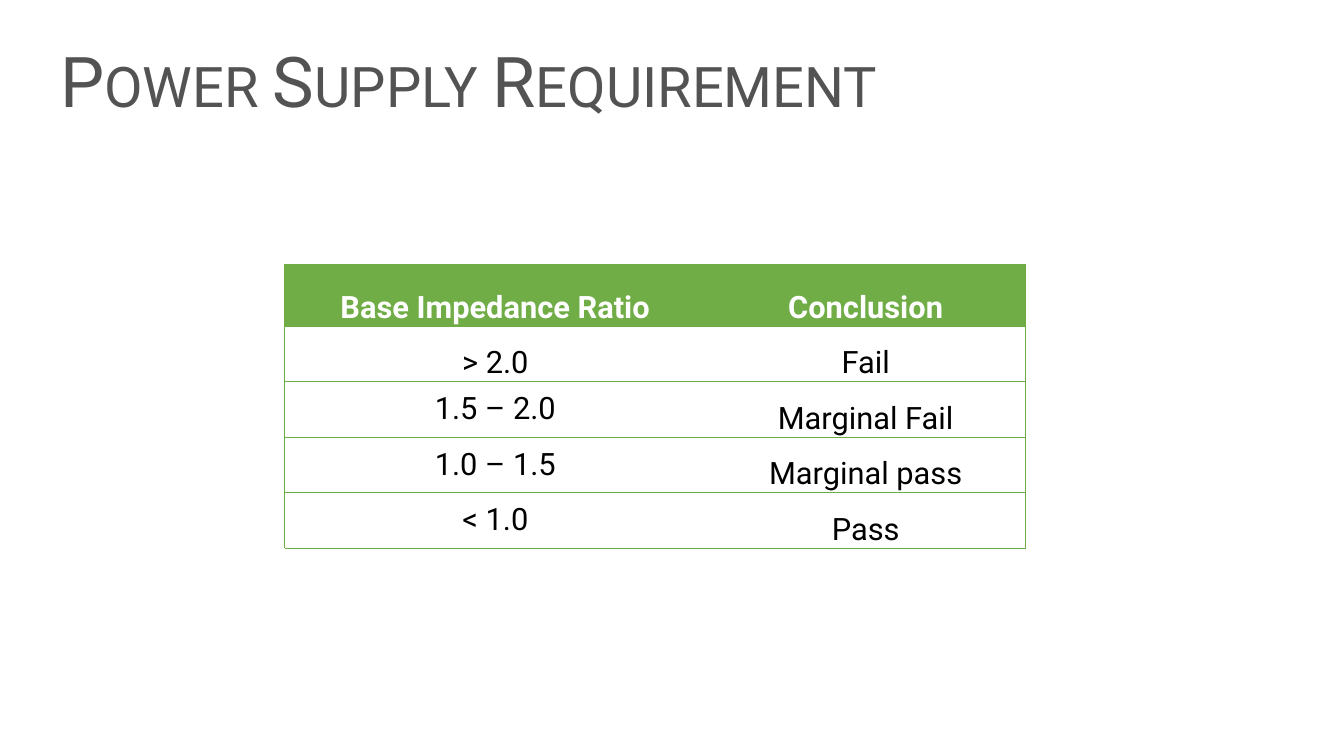
import dataclasses

import lxml.etree
import pptx
import pptx.dml.color
import pptx.enum.text
import pptx.oxml.ns
import pptx.util

ANCHOR = pptx.enum.text.MSO_ANCHOR
ALIGN = pptx.enum.text.PP_ALIGN


@dataclasses.dataclass(frozen=True)
class Theme:
    font: str = "Roboto"
    title_size: int = 100
    table_size: int = 44
    title: str = "535353"
    header_text: str = "FFFFFF"
    body_text: str = "000000"
    header_fill: str = "70AD47"
    border: str = "6DAC43"
    border_width: float = 0.75


THEME = Theme()
GRID_STEP = 0.05
TITLE_AREA = (22, 16, 460, 35)
TABLE_ORIGIN = (113, 105)
COLUMN_WIDTHS = (167.2, 126.8)
HEADER_HEIGHT = 24.4
BODY_HEIGHT = 22

RATIOS = [
    ("Base Impedance Ratio", "Conclusion"),
    ("> 2.0", "Fail"),
    ("1.5 – 2.0", "Marginal Fail"),
    ("1.0 – 1.5", "Marginal pass"),
    ("< 1.0", "Pass"),
]


def grid(steps):
    return pptx.util.Inches(steps * GRID_STEP)


def rgb(value):
    return pptx.dml.color.RGBColor.from_string(value)


def write_text(frame, text, *, size, color, bold=False, align=ALIGN.LEFT,
               anchor=ANCHOR.MIDDLE, line_spacing=1.0, small_caps=False):
    frame.word_wrap = True
    frame.vertical_anchor = anchor
    para = frame.paragraphs[0]
    para.alignment = align
    para.line_spacing = line_spacing
    span = para.add_run()
    span.text = text
    span.font.name = THEME.font
    span.font.size = pptx.util.Pt(size)
    span.font.bold = bold
    span.font.color.rgb = rgb(color)
    if small_caps:
        span.font._element.set("cap", "small")


def add_title(page, text):
    box = page.shapes.add_textbox(*map(grid, TITLE_AREA))
    write_text(box.text_frame, text, size=THEME.title_size, color=THEME.title,
               line_spacing=0.9, small_caps=True)


def set_borders(cell, visible_sides):
    qualified = pptx.oxml.ns.qn
    properties = cell._tc.get_or_add_tcPr()
    for position, side in enumerate("LRTB"):
        line = lxml.etree.Element(qualified(f"a:ln{side}"))
        line.set("w", str(pptx.util.Pt(THEME.border_width)))
        if side in visible_sides:
            fill = lxml.etree.SubElement(line, qualified("a:solidFill"))
            color = lxml.etree.SubElement(fill, qualified("a:srgbClr"))
            color.set("val", THEME.border)
        else:
            lxml.etree.SubElement(line, qualified("a:noFill"))
        properties.insert(position, line)


def format_cell(cell, text, row, column):
    is_header = row == 0
    if is_header:
        cell.fill.solid()
        cell.fill.fore_color.rgb = rgb(THEME.header_fill)
    else:
        cell.fill.background()
    cell.margin_left = cell.margin_right = cell.margin_top = pptx.util.Inches(0.01)
    cell.margin_bottom = 0
    centred = column == 0 and row > 1
    cell.vertical_anchor = ANCHOR.MIDDLE if centred else ANCHOR.BOTTOM
    write_text(cell.text_frame, text, size=THEME.table_size, bold=is_header,
               color=THEME.header_text if is_header else THEME.body_text,
               align=ALIGN.CENTER, anchor=None)
    set_borders(cell, "TB" + "LR"[column])


def add_ratio_table(page, rows):
    heights = [HEADER_HEIGHT] + [BODY_HEIGHT] * (len(rows) - 1)
    size = (sum(COLUMN_WIDTHS), sum(heights))
    frame = page.shapes.add_table(len(rows), len(COLUMN_WIDTHS),
                                  *map(grid, TABLE_ORIGIN + size))
    table = frame.table
    table.horz_banding = False
    for column, width in zip(table.columns, COLUMN_WIDTHS):
        column.width = grid(width)
    for row, height in zip(table.rows, heights):
        row.height = grid(height)
    for row, texts in enumerate(rows):
        for column, text in enumerate(texts):
            format_cell(table.cell(row, column), text, row, column)


def main():
    deck = pptx.Presentation()
    deck.slide_width = pptx.util.Inches(26.67)
    deck.slide_height = pptx.util.Inches(15)
    page = deck.slides.add_slide(deck.slide_layouts[6])
    add_title(page, "Power Supply Requirement")
    add_ratio_table(page, RATIOS)
    deck.save("out.pptx")


if __name__ == "__main__":
    main()
